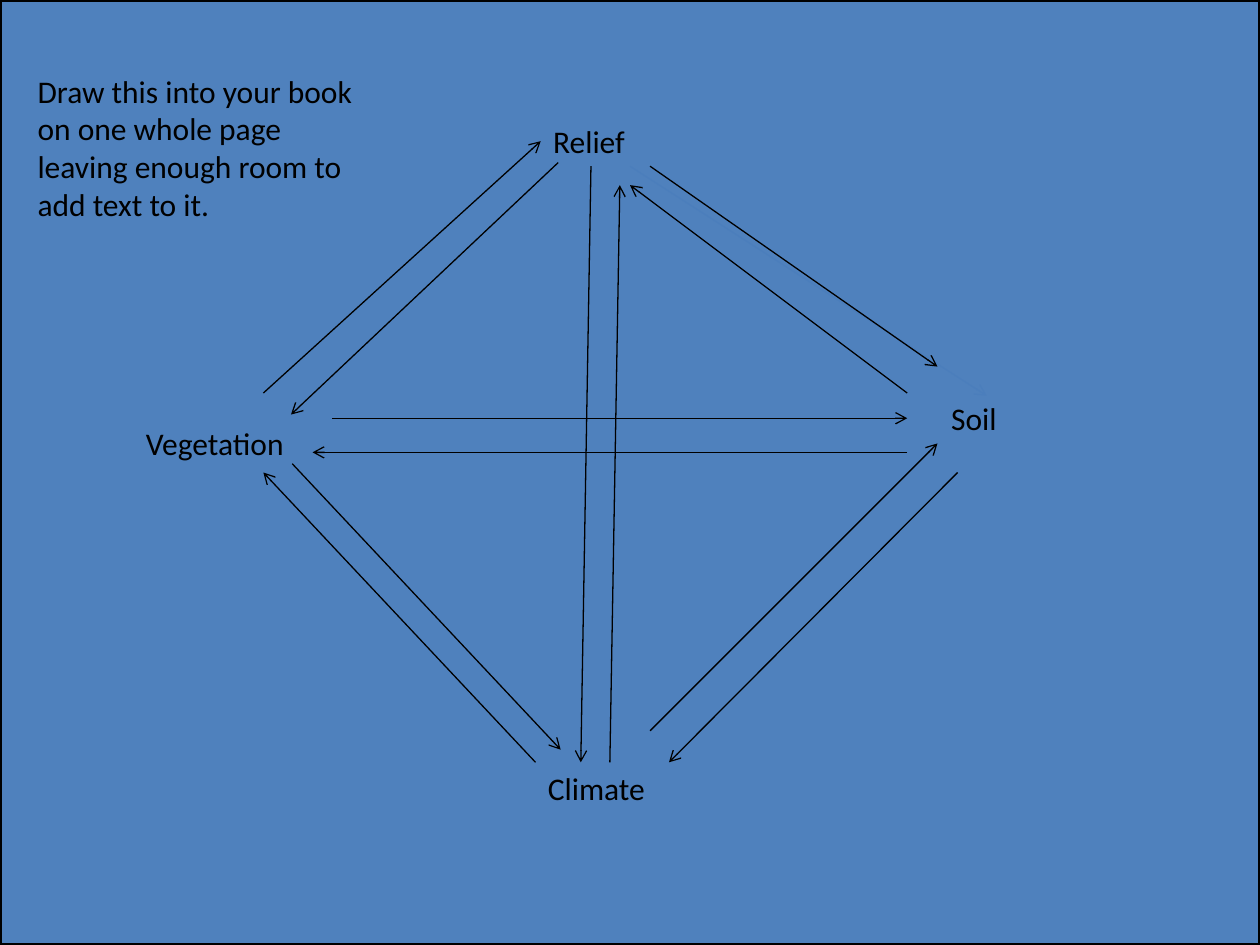
import pptx
import pptx.dml.color
import pptx.enum.shapes
import pptx.enum.text
import pptx.oxml.ns
import pptx.util
from lxml import etree

Pt = pptx.util.Pt
WIDTH, HEIGHT = 720, 540
COLORS = {"back": "4F81BD", "ink": "000000", "faint": "4B7EBC"}

# name: left, top, width, height
LABELS = {
    "Relief": (309, 66.2, 209.5, 29),
    "Climate": (306, 435.6, 187.2, 29),
    "Soil": (536.4, 224.6, 147.6, 29),
    "Vegetation": (76.3, 239, 118.8, 29),
}
TASK = ("Draw this into your book on one whole page "
        "leaving enough room to add text to it.")

# x and y of the start, x and y of the arrowhead
ARROWS = [
    (371.5, 95, 535.7, 209.5),      # Relief to Soil
    (518.4, 224.6, 360, 105.8),     # Soil to Relief
    (547.2, 270, 382.3, 435.6),     # Soil to Climate
    (371.5, 417.6, 535.7, 253.4),   # Climate to Soil
    (306, 435.6, 150.5, 270),       # Climate to Vegetation
    (167, 265, 320.4, 428.4),       # Vegetation to Climate
    (319, 92.9, 166.3, 236.9),      # Relief to Vegetation
    (337.7, 95, 331.9, 435.6),      # Relief to Climate
    (348.5, 435.6, 354.2, 105.8),   # Climate to Relief
    (190, 239, 518.4, 239),         # Vegetation to Soil
    (518.4, 258.5, 178.6, 258.5),   # Soil to Vegetation
]


def rgb(name):
    return pptx.dml.color.RGBColor.from_string(COLORS[name])


def add_panel(slide):
    kind = pptx.enum.shapes.MSO_SHAPE.RECTANGLE
    panel = slide.shapes.add_shape(kind, 0, 0, Pt(WIDTH), Pt(HEIGHT))
    panel.shadow.inherit = False
    panel.fill.solid()
    panel.fill.fore_color.rgb = rgb("back")
    panel.line.color.rgb = rgb("ink")
    panel.line.width = Pt(2)


def add_text(slide, text, box):
    shape = slide.shapes.add_textbox(*map(Pt, box))
    frame = shape.text_frame
    frame.word_wrap = True
    frame.auto_size = pptx.enum.text.MSO_AUTO_SIZE.SHAPE_TO_FIT_TEXT
    frame.text = text
    font = frame.paragraphs[0].font
    font.name = "Calibri"
    font.size = Pt(18)
    font.color.rgb = rgb("ink")
    return shape


def add_arrow(slide, ends, color="ink"):
    kind = pptx.enum.shapes.MSO_CONNECTOR.STRAIGHT
    arrow = slide.shapes.add_connector(kind, *map(Pt, ends))
    arrow.line.color.rgb = rgb(color)
    arrow.line.width = Pt(0.75)
    qn = pptx.oxml.ns.qn
    etree.SubElement(arrow.line._get_or_add_ln(), qn("a:tailEnd"), type="arrow")
    etree.SubElement(arrow._element.spPr, qn("a:effectLst"))
    return arrow


def main():
    deck = pptx.Presentation()
    deck.slide_width, deck.slide_height = Pt(WIDTH), Pt(HEIGHT)
    slide = deck.slides.add_slide(deck.slide_layouts[6])

    add_panel(slide)
    nodes = {name: add_text(slide, name, box) for name, box in LABELS.items()}
    add_arrow(slide, (360, 95, 563.8, 226.1), "faint")
    for ends in ARROWS:
        add_arrow(slide, ends)
    rise = add_arrow(slide, (150.5, 224.6, 309, 80.7))
    rise.end_connect(nodes["Relief"], 1)
    add_text(slide, TASK, (14.4, 37.4, 198.7, 94.3))

    deck.save("out.pptx")


if __name__ == "__main__":
    main()
